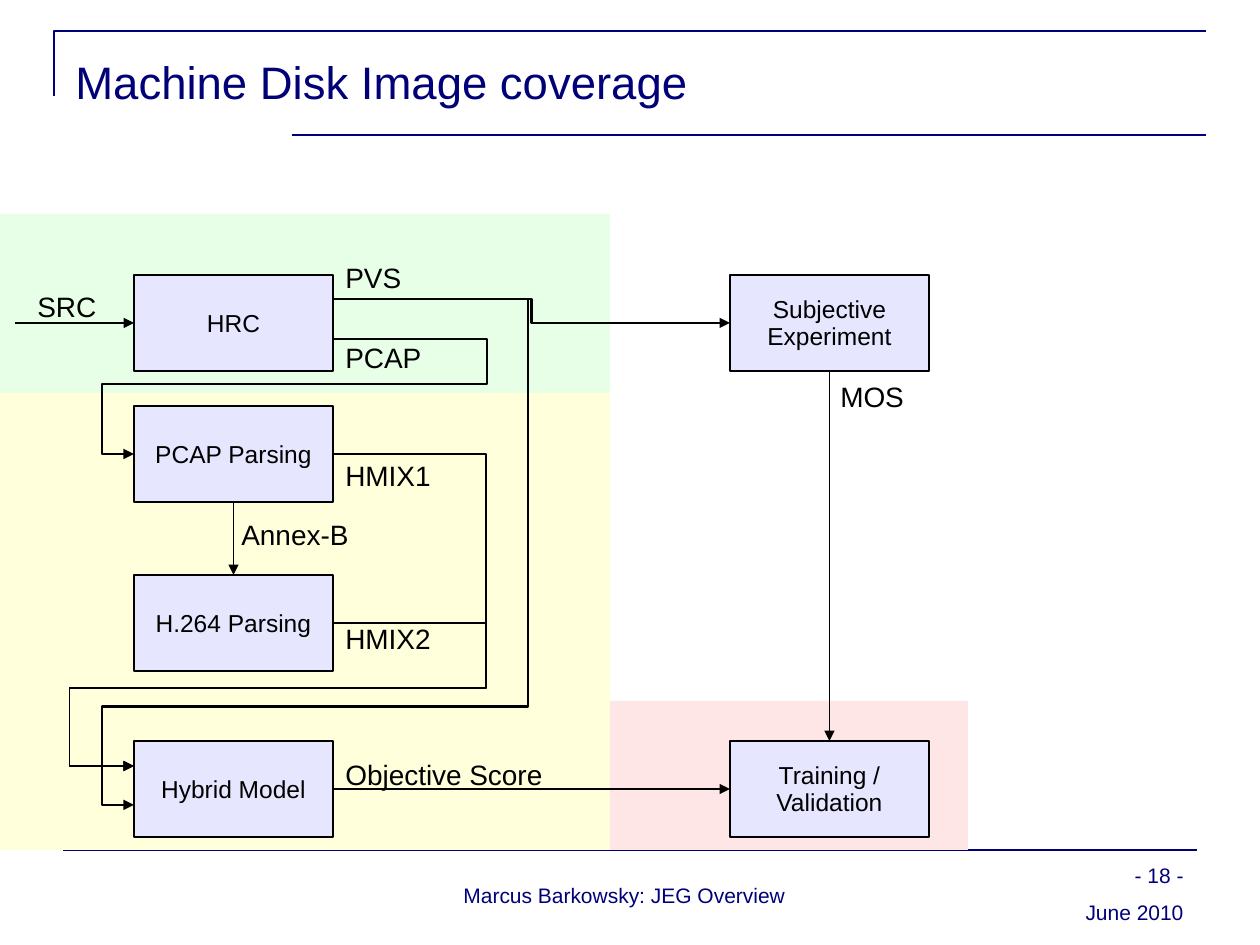
import dataclasses

import lxml.etree
import pptx
import pptx.dml.color
import pptx.enum.shapes
import pptx.enum.text
import pptx.oxml.ns
import pptx.util

PX = 914400 / 126
SHAPE = pptx.enum.shapes.MSO_SHAPE
CONNECTOR = pptx.enum.shapes.MSO_CONNECTOR
ALIGN = pptx.enum.text.PP_ALIGN
ANCHOR = pptx.enum.text.MSO_ANCHOR
qn = pptx.oxml.ns.qn
TOP, LEFT, BOTTOM, RIGHT = range(4)


@dataclasses.dataclass(frozen=True)
class Theme:
    font: str = "Arial"
    navy: str = "000078"
    ink: str = "000000"
    block: str = "E6E6FF"
    green: str = "E6FFE6"
    yellow: str = "FFFFDC"
    pink: str = "FFE6E6"
    title_size: int = 26
    label_size: int = 16
    block_size: int = 14
    footer_size: int = 12
    thin: float = 0.75
    thick: float = 1.5


THEME = Theme()


@dataclasses.dataclass(frozen=True)
class Box:
    x: int
    y: int
    w: int
    h: int

    def inner(self, x, y, w, h):
        return Box(self.x + x, self.y + y, w, h)

    def point(self, x, y):
        return self.x + x, self.y + y

    def emu(self):
        return [px(v) for v in (self.x, self.y, self.w, self.h)]


def px(length):
    return pptx.util.Emu(round(length * PX))


def rgb(color):
    return pptx.dml.color.RGBColor.from_string(color)


def write(frame, text, size, color, align=ALIGN.LEFT, spacing=None):
    frame.text = text
    for paragraph in frame.paragraphs:
        paragraph.alignment = align
        paragraph.line_spacing = spacing
        for run in paragraph.runs:
            run.font.name = THEME.font
            run.font.size = pptx.util.Pt(size)
            run.font.color.rgb = rgb(color)


def add_text(slide, box, text, size, color, align=ALIGN.LEFT, anchor=ANCHOR.MIDDLE, wrap=True):
    frame = slide.shapes.add_textbox(*box.emu()).text_frame
    frame.word_wrap = wrap
    frame.vertical_anchor = anchor
    write(frame, text, size, color, align)


def add_rect(slide, box, fill):
    rect = slide.shapes.add_shape(SHAPE.RECTANGLE, *box.emu())
    rect.shadow.inherit = False
    rect.fill.solid()
    rect.fill.fore_color.rgb = rgb(fill)
    rect.line.fill.background()
    return rect


def set_line(line, color, width):
    line.color.rgb = rgb(color)
    line.width = pptx.util.Pt(width)


def add_line(slide, start, end, color, width, kind=CONNECTOR.STRAIGHT, arrow=False):
    line = slide.shapes.add_connector(kind, *(px(v) for v in (*start, *end)))
    set_line(line.line, color, width)
    properties = line._element.spPr
    if arrow:
        lxml.etree.SubElement(properties.find(qn("a:ln")), qn("a:tailEnd"), type="triangle")
    lxml.etree.SubElement(properties, qn("a:effectLst"))
    return line


def add_bent_arrow(slide, start, end, turns, width):
    """Route through turns, which alternate between x and y positions."""
    arrow = add_line(slide, start, end, THEME.ink, width, CONNECTOR.ELBOW, True)
    geometry = arrow._element.spPr.find(qn("a:prstGeom"))
    geometry.set("prst", f"bentConnector{len(turns) + 2}")
    adjustments = geometry.find(qn("a:avLst"))
    for i, turn in enumerate(turns):
        axis = i % 2
        ratio = (turn - start[axis]) / (end[axis] - start[axis])
        lxml.etree.SubElement(adjustments, qn("a:gd"), name=f"adj{i + 1}",
                              fmla=f"val {round(ratio * 100000)}")


def add_title(slide, box):
    # Corner frame and underline
    start, *rest = [box.point(0, 65), box.point(0, 0), box.point(box.w, 0)]
    builder = slide.shapes.build_freeform(*start, scale=PX)
    builder.add_line_segments(rest, close=False)
    corner = builder.convert_to_shape()
    corner.shadow.inherit = False
    corner.fill.background()
    set_line(corner.line, THEME.navy, THEME.thick)
    add_line(slide, box.point(238, box.h), box.point(box.w, box.h), THEME.navy, THEME.thick)
    # Heading
    add_text(slide, box.inner(9, 7, 1134, 87), "Machine Disk Image coverage",
             THEME.title_size, THEME.navy)


def add_footer(slide, box):
    add_line(slide, box.point(0, 0), box.point(box.w, 0), THEME.navy, THEME.thick)
    for text, place, align in (
        ("June 2010", (905, 45, 228, 34), ALIGN.RIGHT),
        ("Marcus Barkowsky: JEG Overview", (229, 11, 665, 68), ALIGN.CENTER),
        ("- 18 -", (905, 11, 228, 29), ALIGN.RIGHT),
    ):
        add_text(slide, box.inner(*place), text, THEME.footer_size, THEME.navy, align)


def add_block(slide, box, text):
    block = add_rect(slide, box, THEME.block)
    set_line(block.line, THEME.ink, THEME.thin)
    frame = block.text_frame
    frame.word_wrap = False
    frame.vertical_anchor = ANCHOR.MIDDLE
    frame.margin_top, frame.margin_bottom = px(8), px(6)
    write(frame, text, THEME.block_size, THEME.ink, ALIGN.CENTER, 0.93)
    return block


def add_diagram(slide, box):
    block_w, block_h = 199, 96
    left, right = 134, 730
    exit_x = left + block_w
    hrc_y, pcap_y, h264_y, model_y = 61, 192, 361, 527

    # Coverage zones
    for fill, place in (
        (THEME.green, (0, 0, 610, 179)),
        (THEME.yellow, (0, 179, 610, 457)),
        (THEME.pink, (610, 487, 358, 149)),
    ):
        add_rect(slide, box.inner(*place), fill)

    # Processing blocks
    hrc, pcap, h264, model, experiment, training = [
        add_block(slide, box.inner(x, y, block_w, block_h), text)
        for text, x, y in (
            ("HRC", left, hrc_y),
            ("PCAP Parsing", left, pcap_y),
            ("H.264 Parsing", left, h264_y),
            ("Hybrid Model", left, model_y),
            ("Subjective\nExperiment", right, hrc_y),
            ("Training /\vValidation", right, model_y),
        )
    ]

    # Straight flows
    source_y = hrc_y + block_h // 2
    source = add_line(slide, box.point(15, source_y), box.point(left, source_y),
                      THEME.ink, THEME.thin, arrow=True)
    source.end_connect(hrc, LEFT)
    for origin, origin_side, target, target_side in (
        (pcap, BOTTOM, h264, TOP),
        (experiment, BOTTOM, training, TOP),
        (model, RIGHT, training, LEFT),
    ):
        flow = add_line(slide, (0, 0), (1, 1), THEME.ink, THEME.thin, arrow=True)
        flow.begin_connect(origin, origin_side)
        flow.end_connect(target, target_side)

    # Flows that loop round to a block's left side
    pvs_y = 85
    for start_y, lane_x, cross_y, back_x, end_y, width in (
        (125, 487, 170, 102, pcap_y + block_h // 2, THEME.thin),
        (pvs_y, 528, 493, 102, 591, THEME.thick),
        (pcap_y + block_h // 2, 486, 474, 70, 552, THEME.thin),
        (h264_y + block_h // 2, 486, 474, 70, 552, THEME.thin),
    ):
        turns = (box.x + lane_x, box.y + cross_y, box.x + back_x)
        add_bent_arrow(slide, box.point(exit_x, start_y), box.point(left, end_y), turns, width)
    add_bent_arrow(slide, box.point(exit_x, pvs_y), box.point(right, source_y),
                   [box.x + (exit_x + right) / 2], THEME.thick)

    # Flow labels
    for text, x, y, w in (
        ("SRC", 25, 69, 84),
        ("PVS", exit_x, 40, 81),
        ("PCAP", exit_x, 120, 101),
        ("HMIX1", exit_x, 238, 111),
        ("Annex-B", 229, 297, 132),
        ("HMIX2", exit_x, 401, 111),
        ("Objective Score", exit_x, 537, 223),
        ("MOS", 828, 159, 90),
    ):
        add_text(slide, box.inner(x, y, w, 47), text, THEME.label_size, THEME.ink,
                 anchor=ANCHOR.TOP, wrap=False)


def main():
    deck = pptx.Presentation()
    deck.slide_width, deck.slide_height = px(1260), px(945)
    slide = deck.slides.add_slide(deck.slide_layouts[6])
    add_title(slide, Box(54, 31, 1152, 104))
    add_footer(slide, Box(63, 850, 1134, 79))
    add_diagram(slide, Box(0, 214, 968, 636))
    deck.save("out.pptx")


if __name__ == "__main__":
    main()
